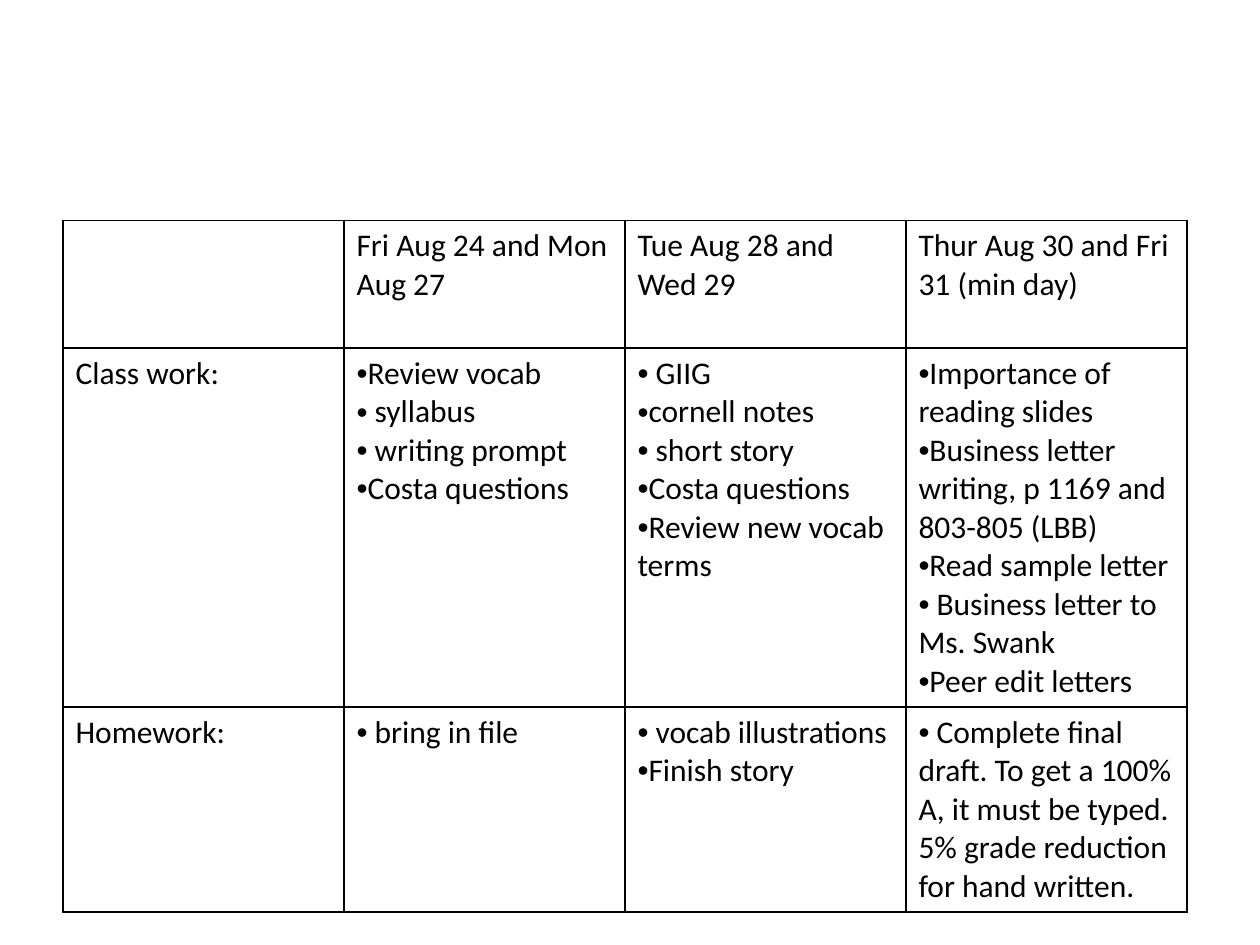
"""Build a class schedule slide with one table of class work and homework."""
from lxml.etree import SubElement
from pptx import Presentation
from pptx.dml.color import RGBColor
from pptx.oxml import parse_xml
from pptx.oxml.ns import nsdecls, qn
from pptx.util import Pt

HEADS = ["", "Fri Aug 24 and Mon Aug 27", "Tue Aug 28 and Wed 29",
         "Thur Aug 30 and Fri 31 (min day)"]
TASKS = [
    ("Class work:",
     ["Review vocab", " syllabus", " writing prompt", "Costa questions"],
     [" GIIG", "cornell notes", " short story", "Costa questions",
      "Review new vocab terms"],
     ["Importance of reading slides",
      "Business letter writing, p 1169 and 803-805 (LBB)",
      "Read sample letter", " Business letter to Ms. Swank",
      "Peer edit letters"]),
    ("Homework:",
     [" bring in file"],
     [" vocab illustrations", "Finish story"],
     [" Complete final draft. To get a 100% A, it must be typed. "
      "5% grade reduction for hand written."]),
]
LEFT, TOP, WIDTH = 36, 126, 160.56
HEIGHTS = [73, 205, 117]
INK = "000000"


def color(code):
    return RGBColor.from_string(code)


def border(cell):
    props = cell._tc.get_or_add_tcPr()
    for spot, side in enumerate(("lnL", "lnR", "lnT", "lnB")):
        props.insert(spot, parse_xml(
            f'<a:{side} {nsdecls("a")} w="{Pt(1)}"><a:solidFill>'
            f'<a:srgbClr val="{INK}"/></a:solidFill></a:{side}>'))


def bullet(para):
    props = para._p.get_or_add_pPr()
    props.set("marL", "0")
    props.set("indent", "0")
    SubElement(props, qn("a:buFont"), typeface="Arial")
    SubElement(props, qn("a:buChar"), char="•")


def write(cell, text):
    listed = isinstance(text, list)
    cell.text_frame.text = "\n".join(text) if listed else text
    for para in cell.text_frame.paragraphs:
        if listed:
            bullet(para)
        for run in para.runs:
            font = run.font
            font.name, font.size, font.bold = "Calibri", Pt(18), False
            font.color.rgb = color(INK)
    cell.fill.background()
    border(cell)


def main():
    deck = Presentation()
    deck.slide_width, deck.slide_height = Pt(720), Pt(540)
    slide = deck.slides.add_slide(deck.slide_layouts[6])
    rows = [HEADS, *TASKS]
    table = slide.shapes.add_table(
        len(rows), len(HEADS), Pt(LEFT), Pt(TOP),
        Pt(WIDTH * len(HEADS)), Pt(sum(HEIGHTS))).table
    table.first_row = table.horz_banding = False
    for col in table.columns:
        col.width = Pt(WIDTH)
    for row, high, texts in zip(table.rows, HEIGHTS, rows):
        row.height = Pt(high)
        for cell, text in zip(row.cells, texts):
            write(cell, text)
    deck.save("out.pptx")


if __name__ == "__main__":
    main()
